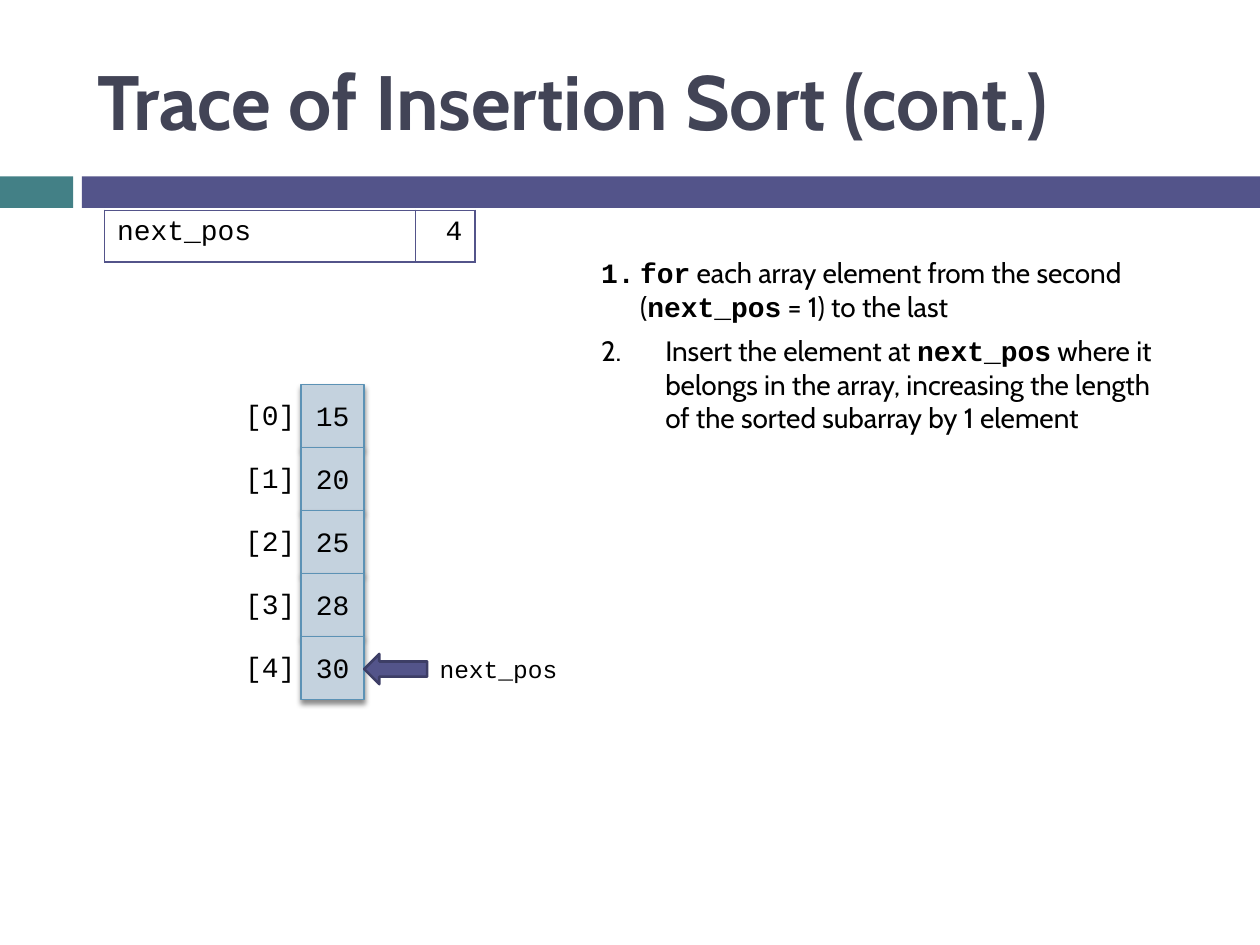
from dataclasses import dataclass
from typing import NamedTuple

from lxml import etree
from pptx import Presentation
from pptx import util as u
from pptx.dml.color import RGBColor
from pptx.enum import shapes, text
from pptx.oxml import ns

GRID = u.Inches(0.5)  # 20 columns by 15 rows on a 10 x 7.5 inch slide


@dataclass(frozen=True)
class Theme:
    heading: str = "424456"
    teal: str = "438086"
    indigo: str = "53548A"
    arrow_line: str = "3D3E66"
    cell_fill: str = "C4D2DE"
    cell_line: str = "5C92B5"
    ink: str = "000000"
    sans: str = "Cabin"
    mono: str = "Courier New"
    title_size: int = 44
    body_size: int = 16
    note_size: int = 14


class Area(NamedTuple):
    """Left, top, width and height in grid columns and rows."""
    column: float
    row: float
    columns: float
    rows: float

    def lengths(self) -> list:
        return [round(value * GRID) for value in self]


class Step(NamedTuple):
    indent: float  # inches
    spans: tuple  # (text, is code)


THEME = Theme()
VALUES = (15, 20, 25, 28, 30)
ARRAY = Area(4.78, 6.1, 1, 1)  # first cell
INDEX_LABEL = Area(3.56, 6.22, 1.46, 0.74)
STEPS = (
    Step(0.31, (("for", True), (" each array element from the second (", False),
                ("next_pos", True), (" = 1) to the last", False))),
    Step(0.51, (("Insert the element at ", False), ("next_pos", True),
                (" where it belongs in the array, increasing the length "
                 "of the sorted subarray by 1 element", False))),
)


def style(font, size: float, name: str = THEME.mono, color: str = THEME.ink,
          bold: bool = False) -> None:
    font.size, font.name, font.bold = u.Pt(size), name, bold
    font.color.rgb = RGBColor.from_string(color)


def add_child(parent, tag: str, **attributes):
    return etree.SubElement(parent, ns.qn(tag), attributes)


def place(shape, area: Area) -> None:
    shape.left, shape.top, shape.width, shape.height = area.lengths()


def write(frame, content: str, size: float, align=text.PP_ALIGN.LEFT) -> None:
    frame.text = content
    para = frame.paragraphs[0]
    para.alignment = align
    style(para.runs[0].font, size)


def add_block(page, kind, area: Area, fill: str, line: str = "", width: float = 0):
    block = page.shapes.add_shape(kind, *area.lengths())
    block.shadow.inherit = False
    block.fill.solid()
    block.fill.fore_color.rgb = RGBColor.from_string(fill)
    if line:
        block.line.color.rgb = RGBColor.from_string(line)
        block.line.width = u.Pt(width)
    else:
        block.line.fill.background()
    return block


def add_label(page, area: Area, content: str, size: float, align=text.PP_ALIGN.LEFT) -> None:
    box = page.shapes.add_textbox(*area.lengths())
    box.text_frame.word_wrap = True
    write(box.text_frame, content, size, align)


def add_soft_shadow(shape) -> None:
    effects = shape._element.spPr.find(ns.qn("a:effectLst"))
    shadow = add_child(effects, "a:outerShdw", blurRad=str(u.Pt(3)), dist=str(u.Pt(2.4)),
                       dir="5400000", rotWithShape="0")
    color = add_child(shadow, "a:srgbClr", val=THEME.ink)
    add_child(color, "a:alpha", val="45000")


def add_array(page) -> None:
    for index, value in enumerate(VALUES):
        cell = add_block(page, shapes.MSO_SHAPE.RECTANGLE,
                         ARRAY._replace(row=ARRAY.row + index),
                         THEME.cell_fill, THEME.cell_line, 0.79)
        add_soft_shadow(cell)
        frame = cell.text_frame
        frame.margin_left = frame.margin_right = 0
        frame.vertical_anchor = text.MSO_ANCHOR.MIDDLE
        write(frame, str(value), THEME.body_size, text.PP_ALIGN.CENTER)
    for index in range(len(VALUES)):
        add_label(page, INDEX_LABEL._replace(row=INDEX_LABEL.row + index),
                  f"[{index}]", THEME.body_size, text.PP_ALIGN.CENTER)


def add_variable_table(page) -> None:
    area = Area(1.66, 3.34, 5.88, 0.82)
    table = page.shapes.add_table(1, 2, *area.lengths()).table
    table.first_row = table.horz_banding = False
    columns = ((4.94, "next_pos", text.PP_ALIGN.LEFT), (0.94, "4", text.PP_ALIGN.RIGHT))
    for index, (width, content, align) in enumerate(columns):
        table.columns[index].width = round(width * GRID)
        cell = table.cell(0, index)
        write(cell.text_frame, content, THEME.body_size, align)
        properties = cell._tc.get_or_add_tcPr()
        for side in "LRTB":
            border = add_child(properties, f"a:ln{side}", w=str(u.Pt(1)))
            add_child(add_child(border, "a:solidFill"), "a:srgbClr", val=THEME.indigo)
        cell.fill.background()


def fill_steps(body) -> None:
    place(body, Area(9.34, 3.96, 9.5, 3.78))
    frame = body.text_frame
    frame.auto_size = text.MSO_AUTO_SIZE.NONE
    frame.vertical_anchor = text.MSO_ANCHOR.TOP
    for index, step in enumerate(STEPS):
        para = frame.add_paragraph() if index else frame.paragraphs[0]
        properties = para._p.get_or_add_pPr()
        indent = u.Inches(step.indent)
        properties.set("marL", str(indent))
        properties.set("indent", str(-indent))
        add_child(properties, "a:buFontTx")
        add_child(properties, "a:buAutoNum", type="arabicPeriod")
        para.space_before, para.space_after = u.Pt(0), u.Pt(6)
        for content, is_code in step.spans:
            span = para.add_run()
            span.text = content
            style(span.font, THEME.body_size, THEME.mono if is_code else THEME.sans,
                  bold=is_code)


def fill_title(title) -> None:
    place(title, Area(1.34, 0.5, 17.84, 2.16))
    frame = title.text_frame
    frame.text = "Trace of Insertion Sort (cont.)"
    frame.auto_size = text.MSO_AUTO_SIZE.NONE
    frame.vertical_anchor = text.MSO_ANCHOR.MIDDLE
    para = frame.paragraphs[0]
    para.alignment = text.PP_ALIGN.LEFT
    style(para.runs[0].font, THEME.title_size, THEME.sans, THEME.heading, bold=True)


def main() -> None:
    deck = Presentation()
    deck.slide_width, deck.slide_height = 20 * GRID, 15 * GRID
    page = deck.slides.add_slide(deck.slide_layouts[1])
    add_block(page, shapes.MSO_SHAPE.RECTANGLE, Area(0, 2.8, 1.16, 0.5), THEME.teal)
    add_block(page, shapes.MSO_SHAPE.RECTANGLE, Area(1.3, 2.8, 18.7, 0.5), THEME.indigo)
    fill_title(page.shapes.title)
    fill_steps(page.placeholders[1])
    add_array(page)
    add_variable_table(page)
    pointer = add_block(page, shapes.MSO_SHAPE.DOWN_ARROW, Area(6.04, 10.12, 0.48, 1),
                        THEME.indigo, THEME.arrow_line, 1.5)
    pointer.rotation = 90
    add_label(page, Area(6.78, 10.28, 2.56, 1.14), "next_pos", THEME.note_size)
    deck.save("out.pptx")


if __name__ == "__main__":
    main()
